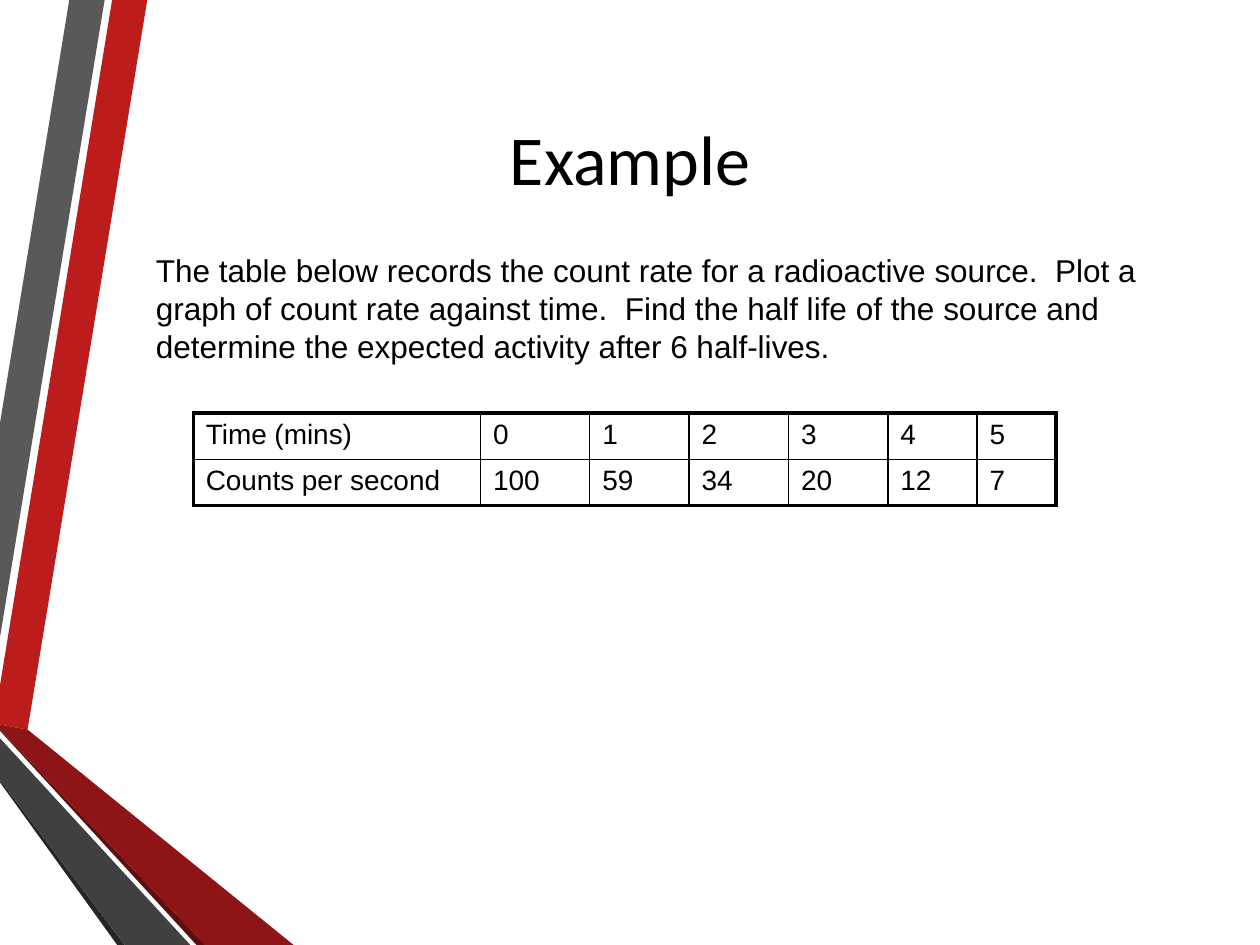
import pptx
import pptx.dml.color
import pptx.enum.text
import pptx.util
from lxml import etree

Pt = pptx.util.Pt
A = "http://schemas.openxmlformats.org/drawingml/2006/main"


def rgb(value):
    return pptx.dml.color.RGBColor.from_string(value)


def style(p, font, size):
    p.font.name = font
    p.font.size = Pt(size)
    p.font.color.rgb = rgb("000000")


prs = pptx.Presentation()
prs.slide_width, prs.slide_height = Pt(720), Pt(540)
s = prs.slides.add_slide(prs.slide_layouts[5])  # Title Only

# Ribbons along the left edge, from back to front
ribbons = [
    ("BC1C1C", [(0, 391.7), (0, 414), (15.8, 416.9), (84.2, 0), (64.1, 0)]),
    ("595959", [(59.8, 0), (39.6, 0), (0, 241.9), (0, 364.3)]),
    ("262626", [(0, 445.7), (0, 447.1), (67, 540), (71.3, 540)]),
    ("5E0E0E", [(0, 416.9), (0, 417.6), (112.3, 540), (117.4, 540)]),
    ("8D1515", [(0, 416.9), (117.4, 540), (167.8, 540), (15.8, 416.9), (0, 414)]),
    ("404040", [(0, 445.7), (71.3, 540), (108.7, 540), (0, 421.9)]),
]
for color, points in ribbons:
    corners = [(Pt(x), Pt(y)) for x, y in points]
    builder = s.shapes.build_freeform(*corners[0], scale=1.0)
    builder.add_line_segments(corners[1:], close=True)
    sp = builder.convert_to_shape()
    sp.fill.solid()
    sp.fill.fore_color.rgb = rgb(color)
    sp.line.fill.background()
    sp.shadow.inherit = False

# Title
title = s.shapes.title
title.left, title.top, title.width, title.height = Pt(36), Pt(36), Pt(648), Pt(108)
tf = title.text_frame
tf.text = "Example"
tf.vertical_anchor = pptx.enum.text.MSO_ANCHOR.MIDDLE
p = tf.paragraphs[0]
p.alignment = pptx.enum.text.PP_ALIGN.CENTER
style(p, "Calibri", 40)

# Task
tf = s.shapes.add_textbox(Pt(82), Pt(140), Pt(601), Pt(72)).text_frame
tf.word_wrap = True
tf.text = (
    "The table below records the count rate for a radioactive source.  "
    "Plot a graph of count rate against time.  Find the half life of the "
    "source and determine the expected activity after 6 half-lives."
)
style(tf.paragraphs[0], "Arial", 18)

# Count rates: thick outer frame, thin inner lines
rows = [
    ["Time (mins)", "0", "1", "2", "3", "4", "5"],
    ["Counts per second", "100", "59", "34", "20", "12", "7"],
]
widths = [164.2, 62.4, 56.8, 56.8, 56.8, 51, 45.2]
row_height = 26.4
last_row, last_col = len(rows) - 1, len(widths) - 1
table = s.shapes.add_table(
    len(rows), len(widths), Pt(110.4), Pt(236), Pt(sum(widths)), Pt(row_height * len(rows))
).table
table.first_row = table.horz_banding = False
for column, width in zip(table.columns, widths):
    column.width = Pt(width)
for i, row in enumerate(rows):
    table.rows[i].height = Pt(row_height)
    for j, text in enumerate(row):
        cell = table.cell(i, j)
        cell.text = text
        style(cell.text_frame.paragraphs[0], "Arial", 16)
        cell.fill.background()
        outer = {"lnL": j == 0, "lnR": j == last_col, "lnT": i == 0, "lnB": i == last_row}
        for k, (side, is_outer) in enumerate(outer.items()):
            width = Pt(2.25 if is_outer else 1)
            cell._tc.get_or_add_tcPr().insert(k, etree.fromstring(
                f'<a:{side} xmlns:a="{A}" w="{width}"><a:solidFill>'
                f'<a:srgbClr val="000000"/></a:solidFill></a:{side}>'
            ))

prs.save("out.pptx")
